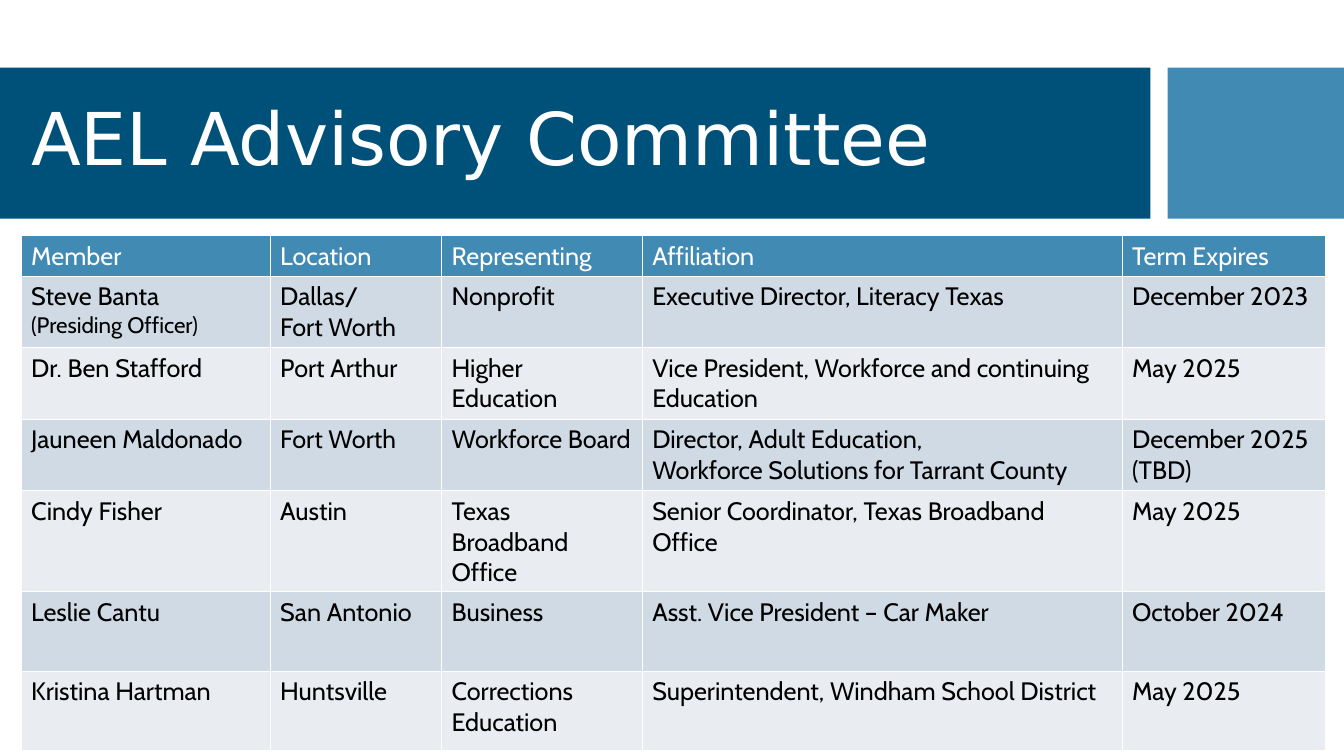
"""Builds the advisory committee slide with its member table."""
import pptx
import pptx.dml.color
import pptx.enum.shapes
import pptx.enum.text
import pptx.util
from lxml import etree

Inches, Pt = pptx.util.Inches, pptx.util.Pt

TITLE = "AEL Advisory Committee"
HEAD = ("Member", "Location", "Representing", "Affiliation", "Term Expires")
ROWS = [
    ("Steve Banta\n(Presiding Officer)", "Dallas/\nFort Worth", "Nonprofit",
     "Executive Director, Literacy Texas", "December 2023"),
    ("Dr. Ben Stafford", "Port Arthur", "Higher Education",
     "Vice President, Workforce and continuing Education", "May 2025"),
    ("Jauneen Maldonado", "Fort Worth", "Workforce Board",
     "Director, Adult Education,\nWorkforce Solutions for Tarrant County",
     "December 2025 (TBD)"),
    ("Cindy Fisher", "Austin", "Texas Broadband Office",
     "Senior Coordinator, Texas Broadband Office", "May 2025"),
    ("Leslie Cantu", "San Antonio", "Business",
     "Asst. Vice President – Car Maker", "October 2024"),
    ("Kristina Hartman", "Huntsville", "Corrections Education",
     "Superintendent, Windham School District", "May 2025"),
]
WIDTHS = (2.47, 1.7, 1.99, 4.76, 2.02)
HEIGHTS = (0.4, 0.71, 0.71, 0.71, 0.8, 0.79, 0.79)
NAVY, BLUE, WHITE, BLACK = "005179", "418AB3", "FFFFFF", "000000"
BANDS = ("CFDAE5", "E9EDF2")
BARS = [(0, 11.41, NAVY), (11.58, 1.75, BLUE)]


def paint(item, color):
    item.fill.solid()
    item.fill.fore_color.rgb = pptx.dml.color.RGBColor.from_string(color)


def write(frame, text, size=18, face="Cabin", color=BLACK, space=None):
    frame.word_wrap = True
    para = frame.paragraphs[0]
    para.line_spacing = space
    for n, line in enumerate(text.split("\n")):
        if n:
            para.add_line_break()
        run = para.add_run()
        run.text = line
        run.font.size = Pt(16 if line.startswith("(") else size)
        run.font.name = face
        run.font.color.rgb = pptx.dml.color.RGBColor.from_string(color)


def edge(cell):
    space = "{http://schemas.openxmlformats.org/drawingml/2006/main}"
    props = cell._tc.get_or_add_tcPr()
    for side in "LRTB":
        line = etree.SubElement(props, space + "ln" + side, w=str(Pt(1)))
        fill = etree.SubElement(line, space + "solidFill")
        etree.SubElement(fill, space + "srgbClr", val=WHITE)


def main():
    deck = pptx.Presentation()
    deck.slide_width, deck.slide_height = Inches(13.33), Inches(7.5)
    slide = deck.slides.add_slide(deck.slide_layouts[6])
    shapes = slide.shapes

    for left, width, color in BARS:
        bar = shapes.add_shape(pptx.enum.shapes.MSO_SHAPE.RECTANGLE,
                               Inches(left), Inches(0.67), Inches(width), Inches(1.5))
        bar.shadow.inherit = False
        bar.line.fill.background()
        paint(bar, color)

    title = shapes.add_textbox(Inches(0.21), Inches(0.82), Inches(11.05), Inches(1.18))
    title.text_frame.vertical_anchor = pptx.enum.text.MSO_ANCHOR.MIDDLE
    write(title.text_frame, TITLE, size=52, face="DejaVu Sans", color=WHITE, space=0.9)

    grid = shapes.add_table(len(HEIGHTS), len(WIDTHS), Inches(0.21), Inches(2.34),
                            Inches(sum(WIDTHS)), Inches(sum(HEIGHTS))).table
    for col, width in zip(grid.columns, WIDTHS):
        col.width = Inches(width)
    for r, (row, high) in enumerate(zip([HEAD] + ROWS, HEIGHTS)):
        grid.rows[r].height = Inches(high)
        for c, text in enumerate(row):
            cell = grid.cell(r, c)
            edge(cell)
            paint(cell, BANDS[(r - 1) % 2] if r else BLUE)
            write(cell.text_frame, text, color=BLACK if r else WHITE)

    deck.save("out.pptx")


if __name__ == "__main__":
    main()
